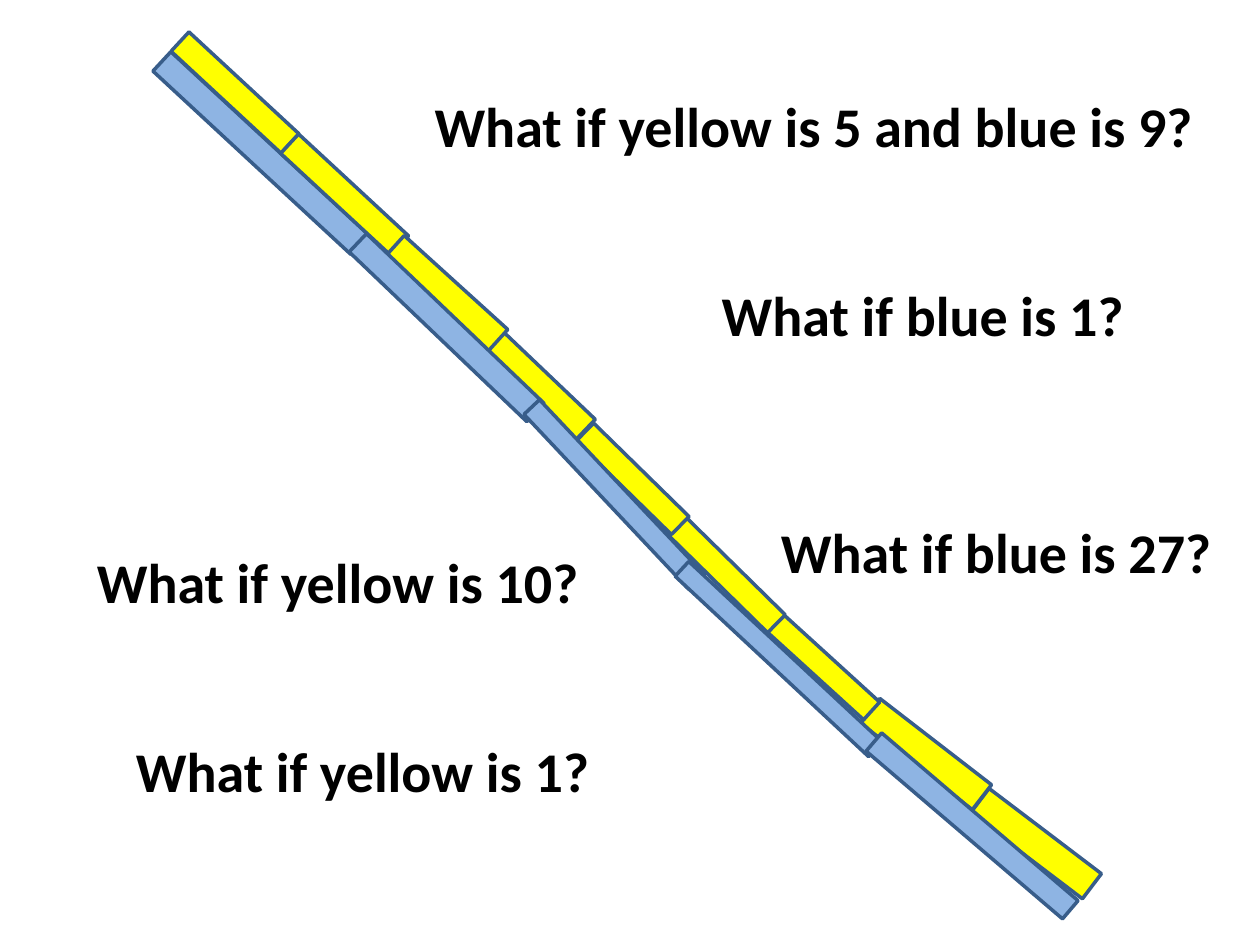
from pptx import Presentation
from pptx.dml.color import RGBColor
from pptx.enum.shapes import MSO_SHAPE
from pptx.enum.text import MSO_AUTO_SIZE
from pptx.util import Inches, Pt

RECTANGLE = MSO_SHAPE.RECTANGLE
FIT_SHAPE = MSO_AUTO_SIZE.SHAPE_TO_FIT_TEXT
YELLOW = RGBColor(0xFF, 0xFF, 0x00)
BLUE = RGBColor(0x8E, 0xB4, 0xE3)
OUTLINE = RGBColor(0x38, 0x5D, 0x8A)
BLACK = RGBColor(0x00, 0x00, 0x00)


def add_rod(shapes, color, left, top, width, height, rotation):
    rod = shapes.add_shape(RECTANGLE, Inches(left), Inches(top),
                           Inches(width), Inches(height))
    rod.rotation = rotation
    rod.shadow.inherit = False
    rod.fill.solid()
    rod.fill.fore_color.rgb = color
    rod.line.color.rgb = OUTLINE
    rod.line.width = Pt(2)


presentation = Presentation()
presentation.slide_width = Inches(10)
presentation.slide_height = Inches(7.5)
slide = presentation.slides.add_slide(presentation.slide_layouts[6])

# Grouped rods at the top: color, left, top, width, height, rotation
first_rods = [
    (BLUE, 1, 1.11, 2.14, 0.21, 42.8),
    (YELLOW, 1.27, 0.63, 1.19, 0.21, 42.8),
    (YELLOW, 2.14, 1.44, 1.19, 0.21, 42.8),
]
group = slide.shapes.add_group_shape()
for rod in first_rods:
    add_rod(group.shapes, *rod)

# Remaining rods, yellow from the bottom up, then blue from the top down
other_rods = [
    (YELLOW, 7.66, 6.57, 1.12, 0.25, 217.2),
    (YELLOW, 6.79, 5.86, 1.12, 0.25, 217.7),
    (YELLOW, 5.97, 5.18, 1.09, 0.19, 222.3),
    (YELLOW, 5.16, 4.44, 1.17, 0.2, 224.5),
    (YELLOW, 4.49, 3.7, 1.06, 0.2, 224.4),
    (YELLOW, 3.63, 2.89, 1.17, 0.25, 223.6),
    (YELLOW, 2.98, 2.21, 1.11, 0.25, 222.2),
    (BLUE, 2.57, 2.5, 1.95, 0.2, 223.7),
    (BLUE, 3.92, 3.84, 1.91, 0.17, 226.7),
    (BLUE, 5.13, 5.15, 2.1, 0.16, 223),
    (BLUE, 6.69, 6.46, 2.05, 0.19, 40.5),
]
for rod in other_rods:
    add_rod(slide.shapes, *rod)

# Questions: text, left, top, width
questions = [
    ("What if yellow is 5 and blue is 9?", 3.35, 0.68, 6.29),
    ("What if yellow is 10?", 0.67, 4.3, 4.07),
    ("What if blue is 27?", 6.1, 4.06, 3.66),
    ("What if yellow is 1?", 0.98, 5.8, 3.85),
    ("What if blue is 1?", 5.63, 2.18, 3.43),
]
for question, left, top, width in questions:
    text_box = slide.shapes.add_textbox(Inches(left), Inches(top),
                                        Inches(width), Inches(0.64))
    text_frame = text_box.text_frame
    text_frame.word_wrap = False
    text_frame.auto_size = FIT_SHAPE
    text_frame.text = question
    font = text_frame.paragraphs[0].runs[0].font
    font.name = "Calibri"
    font.size = Pt(32)
    font.bold = True
    font.color.rgb = BLACK

presentation.save("out.pptx")
